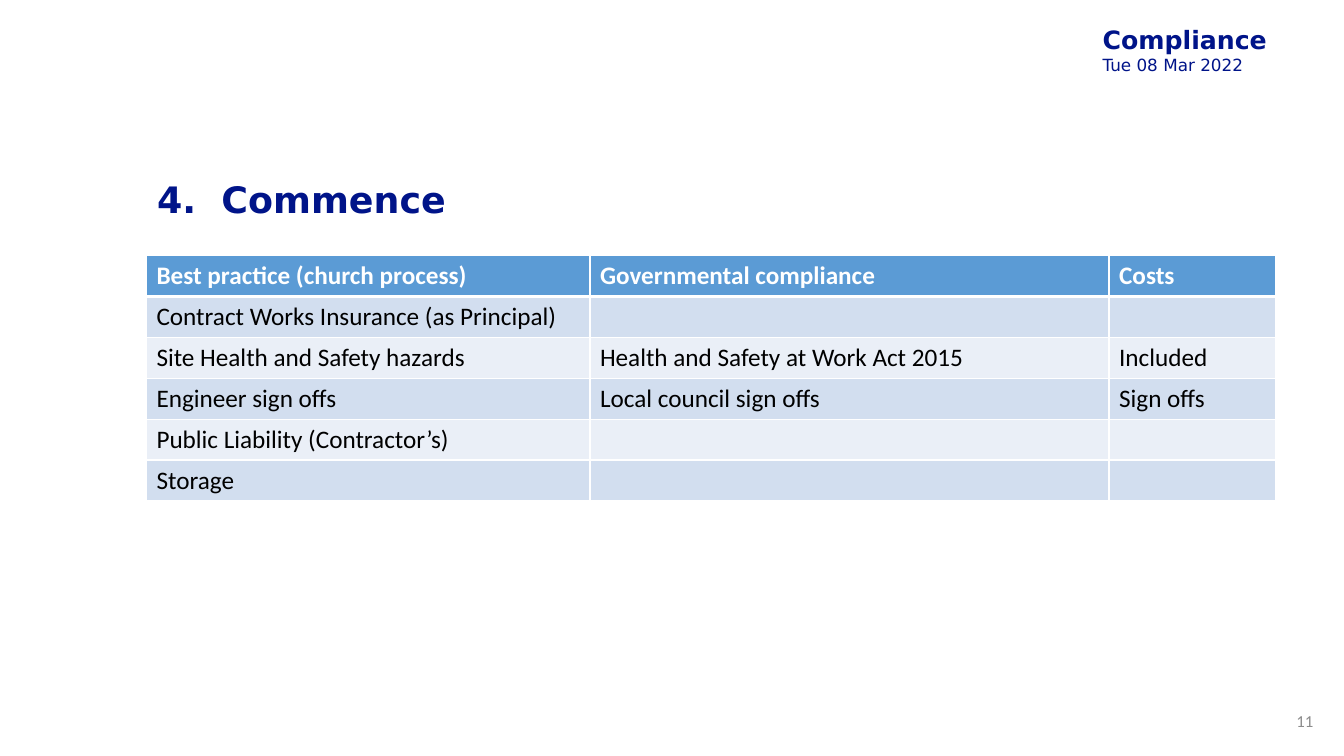
"""Build the Commence compliance slide with its process table."""
from lxml import etree
from pptx import Presentation
from pptx.dml.color import RGBColor
from pptx.enum import text
from pptx.oxml import ns
from pptx.util import Pt

NAVY = RGBColor(0x00, 0x14, 0x89)
GREY = RGBColor(0x8C, 0x8C, 0x8C)
WHITE = RGBColor(0xFF, 0xFF, 0xFF)
BLACK = RGBColor(0x00, 0x00, 0x00)
HEADER_BLUE = RGBColor(0x5B, 0x9B, 0xD5)
BANDS = [RGBColor(0xEA, 0xEF, 0xF7), RGBColor(0xD2, 0xDE, 0xEF)]
HEADING_FONT, BODY_FONT = "DejaVu Sans", "Calibri"

BANNER = [("Compliance", 18, True), ("Tue 08 Mar 2022", 12, False)]
BANNER_INSET = 5
TITLE = "4.\tCommence"
TITLE_INDENT = 46
PAGE = "11"
ROWS = [
    ("Best practice (church process)", "Governmental compliance", "Costs"),
    ("Contract Works Insurance (as Principal)", "", ""),
    ("Site Health and Safety hazards", "Health and Safety at Work Act 2015", "Included"),
    ("Engineer sign offs", "Local council sign offs", "Sign offs"),
    ("Public Liability (Contractor’s)", "", ""),
    ("Storage", "", ""),
]
COL_WIDTHS = [316.8, 370.8, 118.8]
ROW_HEIGHT = 29.2


def style(p, font, size, color, bold=False):
    for r in p.runs:
        r.font.name, r.font.size, r.font.bold = font, Pt(size), bold
        r.font.color.rgb = color


def add_text(s, box, lines, font, color, wrap=True, anchor=text.MSO_ANCHOR.TOP):
    tf = s.shapes.add_textbox(*map(Pt, box)).text_frame
    tf.word_wrap, tf.vertical_anchor = wrap, anchor
    tf.text = "\n".join(line for line, _, _ in lines)
    for p, (_, size, bold) in zip(tf.paragraphs, lines):
        style(p, font, size, color, bold)
    return tf


def add_borders(cell, bottom):
    tcPr = cell._tc.get_or_add_tcPr()
    for side, width in (("L", 1), ("R", 1), ("T", 1), ("B", bottom)):
        ln = etree.SubElement(tcPr, ns.qn(f"a:ln{side}"), w=str(Pt(width)))
        fill = etree.SubElement(ln, ns.qn("a:solidFill"))
        etree.SubElement(fill, ns.qn("a:srgbClr"), val=str(WHITE))


def add_process_table(s):
    size = sum(COL_WIDTHS), ROW_HEIGHT * len(ROWS)
    table = s.shapes.add_table(len(ROWS), len(COL_WIDTHS), *map(Pt, (104.6, 182.6, *size))).table
    for column, width in zip(table.columns, COL_WIDTHS):
        column.width = Pt(width)
    for i, row in enumerate(ROWS):
        header = i == 0
        for j, label in enumerate(row):
            cell = table.cell(i, j)
            add_borders(cell, 3 if header else 1)
            cell.fill.solid()
            cell.fill.fore_color.rgb = HEADER_BLUE if header else BANDS[i % 2]
            cell.text = label
            style(cell.text_frame.paragraphs[0], BODY_FONT, 18, WHITE if header else BLACK, header)


def main():
    prs = Presentation()
    prs.slide_width, prs.slide_height = Pt(960), Pt(540)
    s = prs.slides.add_slide(prs.slide_layouts[6])
    tf = add_text(s, (782.6, 14.4, 128.9, 63.4), BANNER, HEADING_FONT, NAVY, wrap=False)
    tf.margin_left = tf.margin_right = Pt(BANNER_INSET)
    tf.margin_top = tf.margin_bottom = Pt(2.9)
    tf.auto_size = text.MSO_AUTO_SIZE.SHAPE_TO_FIT_TEXT

    middle = text.MSO_ANCHOR.MIDDLE
    tf = add_text(s, (105.1, 108, 806.4, 72.7), [(TITLE, 26, True)], HEADING_FONT, NAVY, anchor=middle)
    p = tf.paragraphs[0]
    p.line_spacing = 0.9
    pPr = p._p.get_or_add_pPr()
    pPr.set("marL", str(Pt(TITLE_INDENT)))
    pPr.set("indent", str(-Pt(TITLE_INDENT)))

    add_process_table(s)

    tf = add_text(s, (915.1, 500.4, 30.2, 28.8), [(PAGE, 12, False)], BODY_FONT, GREY, anchor=middle)
    tf.paragraphs[0].alignment = text.PP_ALIGN.RIGHT
    prs.save("out.pptx")


if __name__ == "__main__":
    main()
